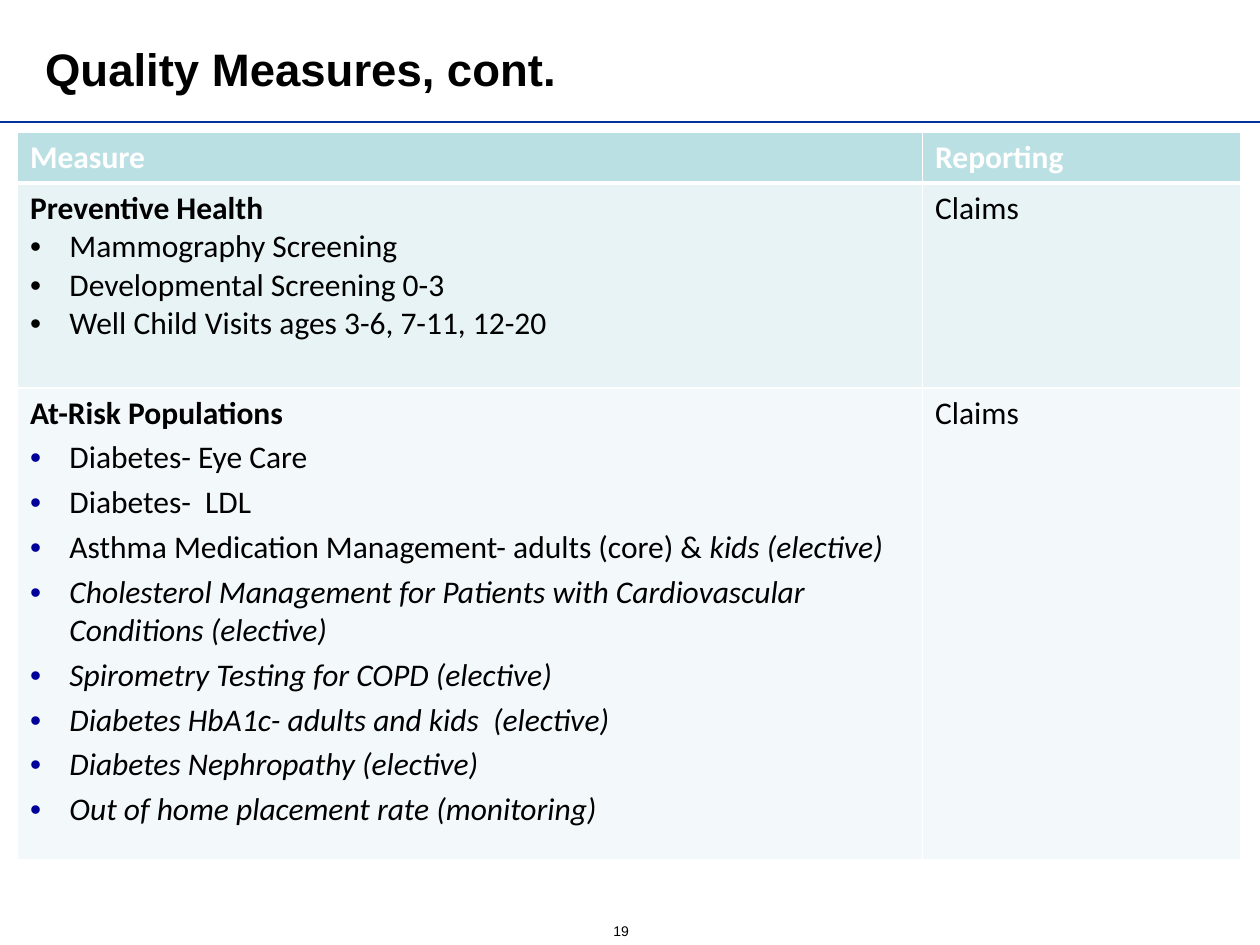
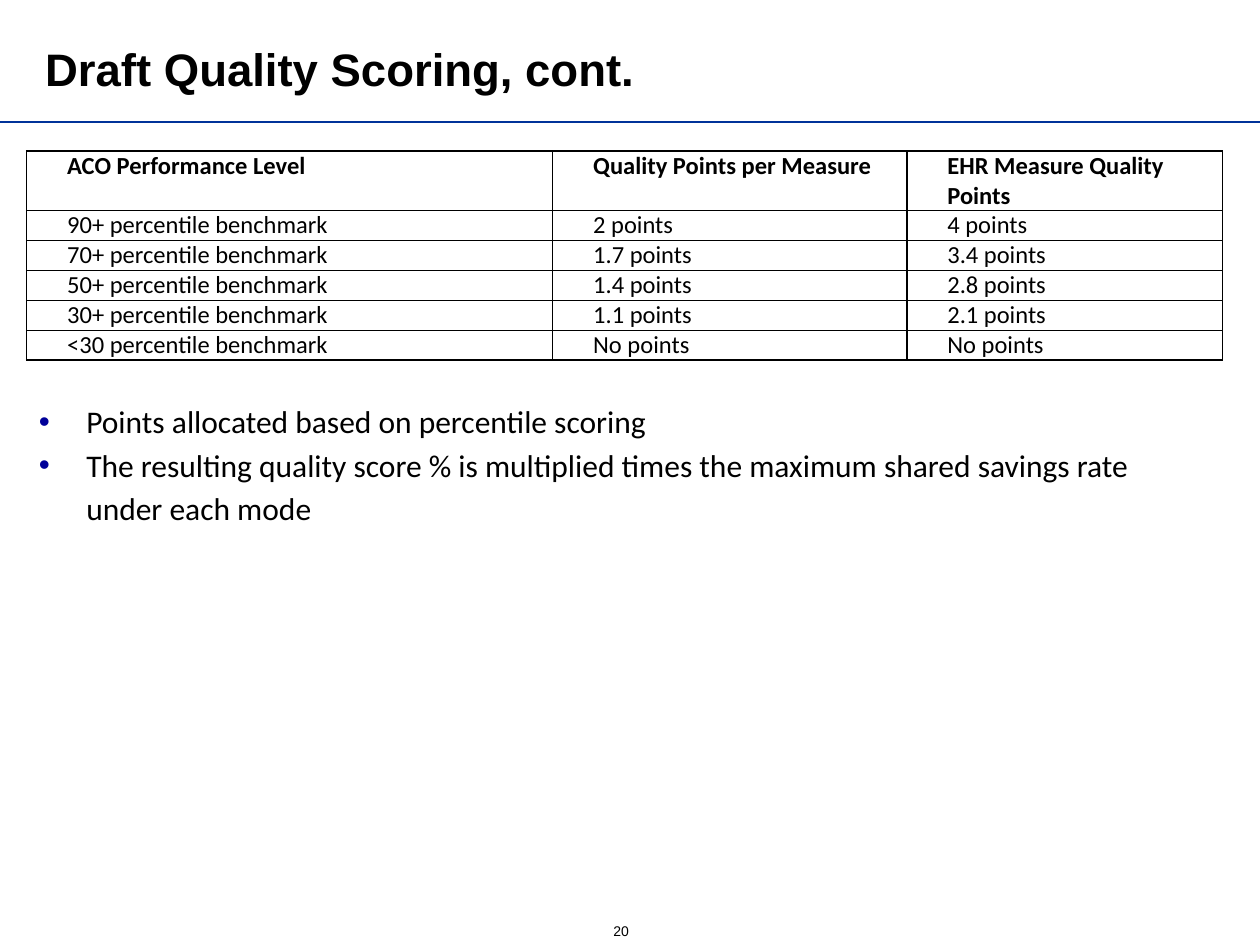
from dataclasses import dataclass
from pptx import Presentation
from pptx.dml.color import RGBColor
from pptx.enum.shapes import MSO_CONNECTOR
from pptx.enum.text import MSO_ANCHOR
from pptx.oxml.ns import qn
from pptx.util import Pt
from lxml.etree import SubElement


@dataclass(frozen=True)
class Theme:
    black: str = "000000"
    white: str = "FFFFFF"
    rule: str = "003399"
    bullet: str = "000099"
    header: str = "BBE0E3"
    band_dark: str = "E7F3F4"
    band_light: str = "F3F9FA"
    title_font: str = "Arial"
    body_font: str = "Calibri"
    title_size: float = 26
    body_size: float = 18
    grid_size: float = 14
    number_size: float = 8


@dataclass(frozen=True)
class Para:
    text: str = ""
    italic_text: str = ""
    bold: bool = False
    color: str = "000000"
    size: float = 18
    bullet: str = ""
    indent: float = 0
    before: float = 0
    spacing: float = 1


THEME = Theme()
WIDTH, HEIGHT = 720, 540


def format_run(r, size, font=THEME.body_font, color=THEME.black, bold=False, italic=False):
    r.font.size = Pt(size)
    r.font.name = font
    r.font.color.rgb = RGBColor.from_string(color)
    r.font.bold = bold
    r.font.italic = italic


def indent_paragraph(p, indent, bullet):
    pPr = p._p.get_or_add_pPr()
    pPr.set("marL", str(Pt(indent)))
    pPr.set("indent", str(-Pt(indent) if bullet else 0))
    if bullet:
        color = SubElement(pPr, qn("a:buClr"))
        SubElement(color, qn("a:srgbClr"), val=bullet)
        SubElement(pPr, qn("a:buFont"), typeface="Arial")
        SubElement(pPr, qn("a:buChar"), char="•")


def write_paragraphs(tf, paras):
    tf.word_wrap = True
    for i, para in enumerate(paras):
        p = tf.paragraphs[0] if i == 0 else tf.add_paragraph()
        indent_paragraph(p, para.indent, para.bullet)
        p.line_spacing = para.spacing
        if i:
            p.space_before = Pt(para.before)
        if para.text:
            p.text = para.text
            format_run(p.runs[0], para.size, color=para.color, bold=para.bold)
        if para.italic_text:
            r = p.add_run()
            r.text = para.italic_text
            format_run(r, para.size, color=para.color, italic=True)


def add_label(slide, box, text, size, bold=False):
    sp = slide.shapes.add_textbox(*map(Pt, box))
    tf = sp.text_frame
    tf.text = text
    tf.word_wrap = True
    format_run(tf.paragraphs[0].runs[0], size, THEME.title_font, bold=bold)
    return tf


def add_base_slide(prs, title, number):
    slide = prs.slides.add_slide(prs.slide_layouts[6])
    line = slide.shapes.add_connector(MSO_CONNECTOR.STRAIGHT, 0, Pt(69.8), Pt(WIDTH), Pt(69.8))
    line.line.color.rgb = RGBColor.from_string(THEME.rule)
    line.line.width = Pt(1.5)
    SubElement(line._element.spPr, qn("a:effectLst"))
    add_label(slide, (343.4, 523.4, 24.5, 16.6), str(number), THEME.number_size)
    tf = add_label(slide, (18.7, 10, 547, 58.3), title, THEME.title_size, bold=True)
    tf.vertical_anchor = MSO_ANCHOR.MIDDLE
    return slide


def set_borders(cell, color, widths):
    tcPr = cell._tc.get_or_add_tcPr()
    for side, width in zip("LRTB", widths):
        ln = SubElement(tcPr, qn(f"a:ln{side}"), w=str(Pt(width)))
        fill = SubElement(ln, qn("a:solidFill"))
        SubElement(fill, qn("a:srgbClr"), val=color)


def fill_cell(cell, color):
    if color:
        cell.fill.solid()
        cell.fill.fore_color.rgb = RGBColor.from_string(color)
    else:
        cell.fill.background()


def add_grid(slide, left, top, col_widths, row_heights, rows, fills, border, header_rule=1, margins=None):
    frame = slide.shapes.add_table(len(rows), len(col_widths), Pt(left), Pt(top),
                                   Pt(sum(col_widths)), Pt(sum(row_heights)))
    table = frame.table
    table.horz_banding = False
    for column, width in zip(table.columns, col_widths):
        column.width = Pt(width)
    for i, (row, height) in enumerate(zip(table.rows, row_heights)):
        row.height = Pt(height)
        for cell, paras in zip(row.cells, rows[i]):
            if margins:
                cell.margin_left = cell.margin_right = Pt(margins[0])
                cell.margin_top = cell.margin_bottom = Pt(margins[1])
            top_rule = header_rule if i == 1 else 1
            bottom_rule = header_rule if i == 0 else 1
            set_borders(cell, border, (1, 1, top_rule, bottom_rule))
            fill_cell(cell, fills[i])
            write_paragraphs(cell.text_frame, paras)


def build_measures(prs):
    slide = add_base_slide(prs, "Quality Measures, cont.", 19)
    header = [[Para(text, bold=True, color=THEME.white)] for text in ("Measure", "Reporting")]
    claims = [Para("Claims")]
    preventive = [Para("Preventive Health", bold=True)] + [
        Para(text, bullet=THEME.black, indent=22.5)
        for text in ("Mammography Screening", "Developmental Screening 0-3",
                     "Well Child Visits ages 3-6, 7-11, 12-20")]
    at_risk_items = [
        ("Diabetes- Eye Care", ""),
        ("Diabetes-  LDL", ""),
        ("Asthma Medication Management- adults (core) & ", "kids (elective)"),
        ("", "Cholesterol Management for Patients with Cardiovascular Conditions (elective)"),
        ("", "Spirometry Testing for COPD (elective)"),
        ("", "Diabetes HbA1c- adults and kids  (elective)"),
        ("", "Diabetes Nephropathy (elective)"),
        ("", "Out of home placement rate (monitoring)"),
    ]
    at_risk = [Para("At-Risk Populations", bold=True)] + [
        Para(text, italic, bullet=THEME.bullet, indent=22.5, before=3.6)
        for text, italic in at_risk_items]
    add_grid(slide, 10, 75.8, (517.2, 182), (28.8, 117, 269.7),
             [header, [preventive, claims], [at_risk, claims]],
             (THEME.header, THEME.band_dark, THEME.band_light), THEME.white, header_rule=3)


def build_scoring(prs):
    slide = add_base_slide(prs, "Draft Quality Scoring, cont.", 20)
    levels = [
        ("ACO Performance Level", "Quality Points per Measure", "EHR Measure Quality Points"),
        ("90+ percentile benchmark", "2 points", "4 points"),
        ("70+ percentile benchmark", "1.7 points", "3.4 points"),
        ("50+ percentile benchmark", "1.4 points", "2.8 points"),
        ("30+ percentile benchmark", "1.1 points", "2.1 points"),
        ("<30 percentile benchmark", "No points", "No points"),
    ]
    rows = [[[Para(text, bold=i == 0, size=THEME.grid_size, indent=18)] for text in level]
            for i, level in enumerate(levels)]
    add_grid(slide, 15.2, 86.4, (300.6, 202.4, 180.5), [34] + [17.1] * 5,
             rows, [None] * len(rows), THEME.black, margins=(5.2, 0))
    sp = slide.shapes.add_textbox(Pt(15.2), Pt(223.2), Pt(683.3), Pt(82.8))
    write_paragraphs(sp.text_frame, [
        Para(text, size=THEME.body_size, bullet=THEME.bullet, indent=27, spacing=1.15)
        for text in ("Points allocated based on percentile scoring",
                     "The resulting quality score % is multiplied times the maximum "
                     "shared savings rate under each mode")])


def main():
    prs = Presentation()
    prs.slide_width, prs.slide_height = Pt(WIDTH), Pt(HEIGHT)
    build_measures(prs)
    build_scoring(prs)
    prs.save("out.pptx")


if __name__ == "__main__":
    main()
